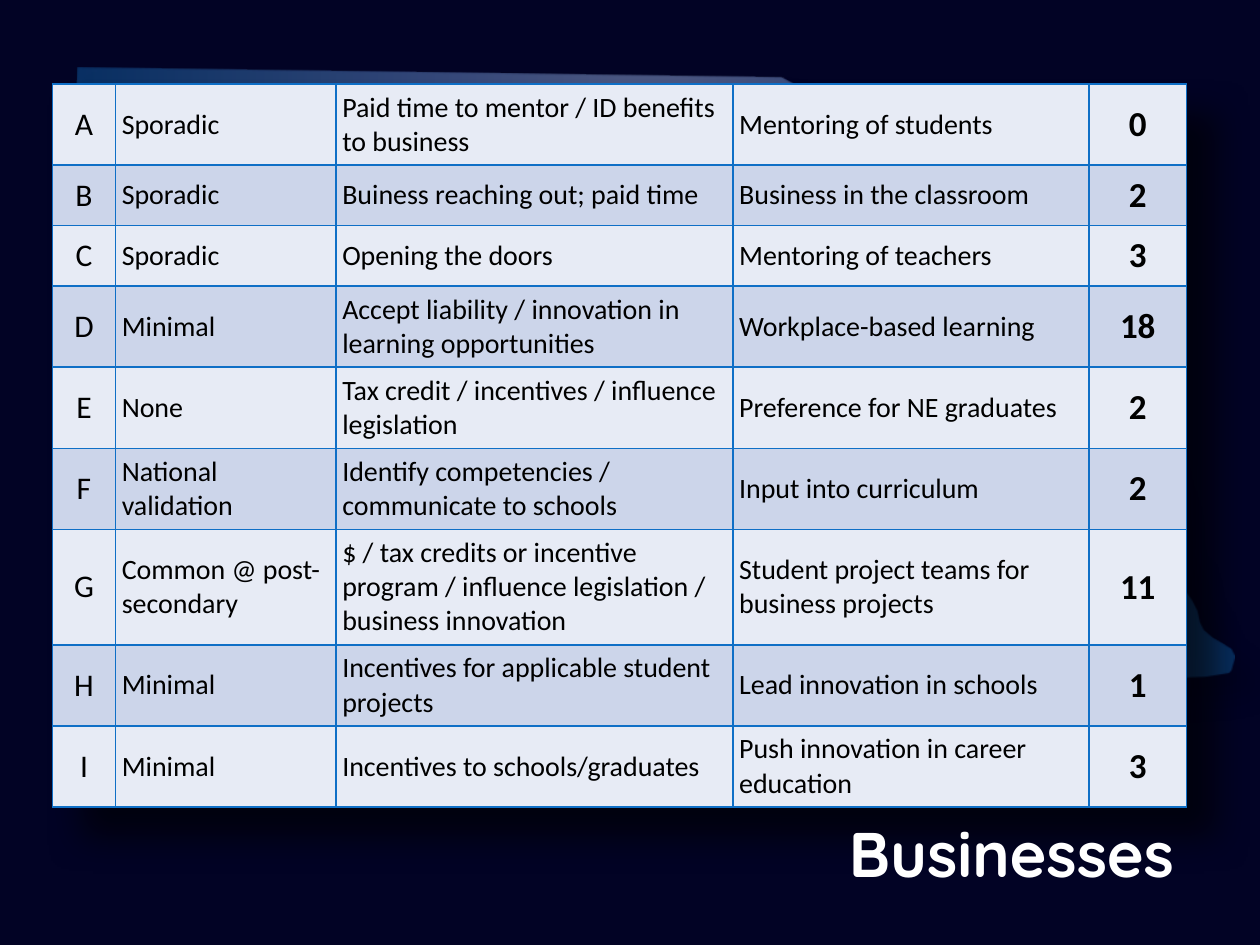
"""Build the Businesses slide: a ranked table of ideas over a state outline."""
import lxml.etree
import pptx
import pptx.dml.color
import pptx.enum.shapes
import pptx.enum.text
import pptx.oxml.ns
import pptx.util

Pt = pptx.util.Pt
RGBColor = pptx.dml.color.RGBColor
qn = pptx.oxml.ns.qn
Align = pptx.enum.text.PP_ALIGN

BLACK = RGBColor(0x00, 0x00, 0x00)
WHITE = RGBColor(0xFF, 0xFF, 0xFF)
NIGHT = RGBColor(0x0A, 0x0D, 0x96)
BORDER = RGBColor(0x0F, 0x6F, 0xC6)
ROW_FILLS = (RGBColor(0xE7, 0xEB, 0xF5), RGBColor(0xCC, 0xD5, 0xEA))
DEEP = RGBColor(0x0C, 0x59, 0x9F)
MIDDLE = RGBColor(0x6B, 0x8F, 0xCF)
PALE = RGBColor(0x91, 0xA9, 0xDD)
MIDDLE_RIGHT = RGBColor(0x6D, 0x90, 0xCF)

STATE_STOPS = ((0, DEEP), (33, MIDDLE), (47, PALE), (53, PALE), (68, MIDDLE_RIGHT), (100, DEEP))
STATE_OUTLINE = (
    (44.6, 38.9), (38.2, 267.1), (180.7, 273.6), (185.8, 388.1), (233.3, 388.8),
    (348.5, 390.2), (490.3, 391), (580.3, 390.2), (653.8, 388.1), (689, 386.6),
    (702, 384.5), (703.4, 383), (705.6, 375.1), (703.4, 370.8), (697.7, 367.2),
    (692.6, 364.3), (687.6, 360), (685.4, 355.7), (684, 349.2), (681.1, 343.4),
    (674.6, 334.1), (673.2, 331.2), (673.2, 317.5), (663.1, 310.3), (663.1, 305.3),
    (662.4, 280.1), (658.1, 272.9), (655.9, 263.5), (652.3, 238.3), (648, 232.6),
    (645.1, 226.8), (644.4, 214.6), (640.8, 208.8), (635.8, 200.9), (635, 181.4),
    (633.6, 157.7), (629.3, 153.4), (625, 152.6), (621.4, 146.9), (618.5, 145.4),
    (617.8, 137.5), (613.4, 126), (607.7, 115.2), (605.5, 108), (595.4, 101.5),
    (582.5, 82.1), (576.7, 80.6), (579.6, 79.2), (575.3, 75.6), (566.6, 72.7),
    (552.2, 68.4), (549.4, 66.2), (545.8, 59.8), (541.4, 57.6), (533.5, 59),
    (522, 61.9), (513.4, 64.8), (478.8, 64.8), (469.4, 56.9), (446.4, 44.6),
)

COLUMN_WIDTHS = (36, 126, 226.8, 203.6, 55.6)
IDEAS = (
    ("A", "Sporadic", "Paid time to mentor / ID benefits to business", "Mentoring of students", "0"),
    ("B", "Sporadic", "Buiness reaching out; paid time", "Business in the classroom", "2"),
    ("C", "Sporadic", "Opening the doors", "Mentoring of teachers", "3"),
    ("D", "Minimal", "Accept liability / innovation in learning opportunities", "Workplace-based learning", "18"),
    ("E", "None", "Tax credit / incentives / influence legislation", "Preference for NE graduates", "2"),
    ("F", "National validation", "Identify competencies / communicate to schools", "Input into curriculum", "2"),
    ("G", "Common @ post-secondary",
     "$ / tax credits or incentive program / influence legislation / business innovation",
     "Student project teams for business projects", "11"),
    ("H", "Minimal", "Incentives for applicable student projects", "Lead innovation in schools", "1"),
    ("I", "Minimal", "Incentives to schools/graduates", "Push innovation in career education", "3"),
)


def add_xml(parent, tag, **attributes):
    """Append a drawing element and return it."""
    return lxml.etree.SubElement(parent, qn(tag), {key: str(value) for key, value in attributes.items()})


def add_color(parent, color, alpha=100):
    """Append a colour with an opacity in percent."""
    add_xml(add_xml(parent, "a:srgbClr", val=color), "a:alpha", val=alpha * 1000)


def add_shadow(parent, blur, distance, alpha):
    """Append a black shadow falling to the lower right."""
    effects = add_xml(parent, "a:effectLst")
    outer = add_xml(effects, "a:outerShdw", blurRad=Pt(blur), dist=Pt(distance),
                    dir=45 * 60000, algn="tl", rotWithShape=0)
    add_color(outer, BLACK, alpha)
    return effects


class SlideBuilder:
    """Hold the text style and the slide being drawn."""

    body_font, title_font = "Calibri", "Quicksand"

    def __init__(self, slide):
        """Start on a slide with a black background."""
        self.slide = slide
        slide.background.fill.solid()
        slide.background.fill.fore_color.rgb = BLACK

    def set_text(self, frame, text, font, size, color, bold=False, align=Align.LEFT):
        """Put one styled paragraph in a text frame."""
        paragraph = frame.paragraphs[0]
        paragraph.text = text
        paragraph.alignment = align
        paragraph.font.name = font
        paragraph.font.size = Pt(size)
        paragraph.font.bold = bold
        paragraph.font.color.rgb = color

    def tint(self, width, height, color, alpha):
        """Lay a translucent colour over the whole slide."""
        veil = self.slide.shapes.add_shape(
            pptx.enum.shapes.MSO_SHAPE.RECTANGLE, 0, 0, Pt(width), Pt(height))
        veil.shadow.inherit = False
        veil.line.fill.background()
        veil.fill.solid()
        veil.fill.fore_color.rgb = color
        solid_color = veil._element.spPr.find(qn("a:solidFill"))[0]
        add_xml(solid_color, "a:alpha", val=alpha * 1000)

    def outline(self, points, stops, alpha):
        """Draw a closed outline with a translucent gradient and a shadow."""
        corners = [(Pt(x), Pt(y)) for x, y in points]
        builder = self.slide.shapes.build_freeform(*corners[0])
        builder.add_line_segments(corners[1:], close=True)
        state = builder.convert_to_shape()
        state.line.fill.background()
        state.fill.gradient()
        state.fill.gradient_angle = 0
        stop_list = state._element.spPr.find(qn("a:gradFill")).find(qn("a:gsLst"))
        stop_list.clear()
        for position, color in stops:
            add_color(add_xml(stop_list, "a:gs", pos=position * 1000), color, alpha)
        add_shadow(state._element.spPr, 15, 18, 26)

    def border(self, cell):
        """Rule all four sides of a cell ahead of its fill."""
        properties = cell._tc.get_or_add_tcPr()
        for index, side in enumerate(("a:lnL", "a:lnR", "a:lnT", "a:lnB")):
            line = add_xml(properties, side, w=Pt(1))
            add_color(add_xml(line, "a:solidFill"), BORDER)
            properties.insert(index, line)

    def table(self, left, top, row_height, widths, rows):
        """Draw a banded table whose outer columns are centred."""
        frame = self.slide.shapes.add_table(
            len(rows), len(widths), Pt(left), Pt(top), Pt(sum(widths)), Pt(row_height * len(rows)))
        table = frame.table
        table.first_row = table.horz_banding = False
        properties = table._tbl.tblPr
        properties.insert(0, add_shadow(properties, 20, 24, 60))
        for column, width in zip(table.columns, widths):
            column.width = Pt(width)
        last = len(widths) - 1
        for row_index, row in enumerate(rows):
            table.rows[row_index].height = Pt(row_height)
            for column_index, text in enumerate(row):
                cell = table.cell(row_index, column_index)
                cell.margin_left = cell.margin_right = Pt(3.6)
                cell.margin_top = cell.margin_bottom = Pt(3.6)
                cell.vertical_anchor = pptx.enum.text.MSO_ANCHOR.MIDDLE
                cell.fill.solid()
                cell.fill.fore_color.rgb = ROW_FILLS[row_index % 2]
                self.border(cell)
                self.set_text(cell.text_frame, text, self.body_font,
                              {0: 18, last: 20}.get(column_index, 16), BLACK, column_index == last,
                              Align.CENTER if column_index in (0, last) else Align.LEFT)

    def title(self, text, left, top, width, height):
        """Set the slide title against its right edge."""
        frame = self.slide.shapes.add_textbox(Pt(left), Pt(top), Pt(width), Pt(height)).text_frame
        frame.word_wrap = True
        frame.auto_size = pptx.enum.text.MSO_AUTO_SIZE.SHAPE_TO_FIT_TEXT
        self.set_text(frame, text, self.title_font, 36, WHITE, True, Align.RIGHT)


def main():
    """Assemble and save the slide."""
    deck = pptx.Presentation()
    deck.slide_width, deck.slide_height = Pt(720), Pt(540)
    builder = SlideBuilder(deck.slides.add_slide(deck.slide_layouts[6]))
    builder.tint(720, 540, NIGHT, 25)
    builder.outline(STATE_OUTLINE, STATE_STOPS, 50)
    builder.table(30, 48, 34.6, COLUMN_WIDTHS, IDEAS)
    builder.title("Businesses", 420, 462, 258, 51)
    deck.save("out.pptx")


if __name__ == "__main__":
    main()
